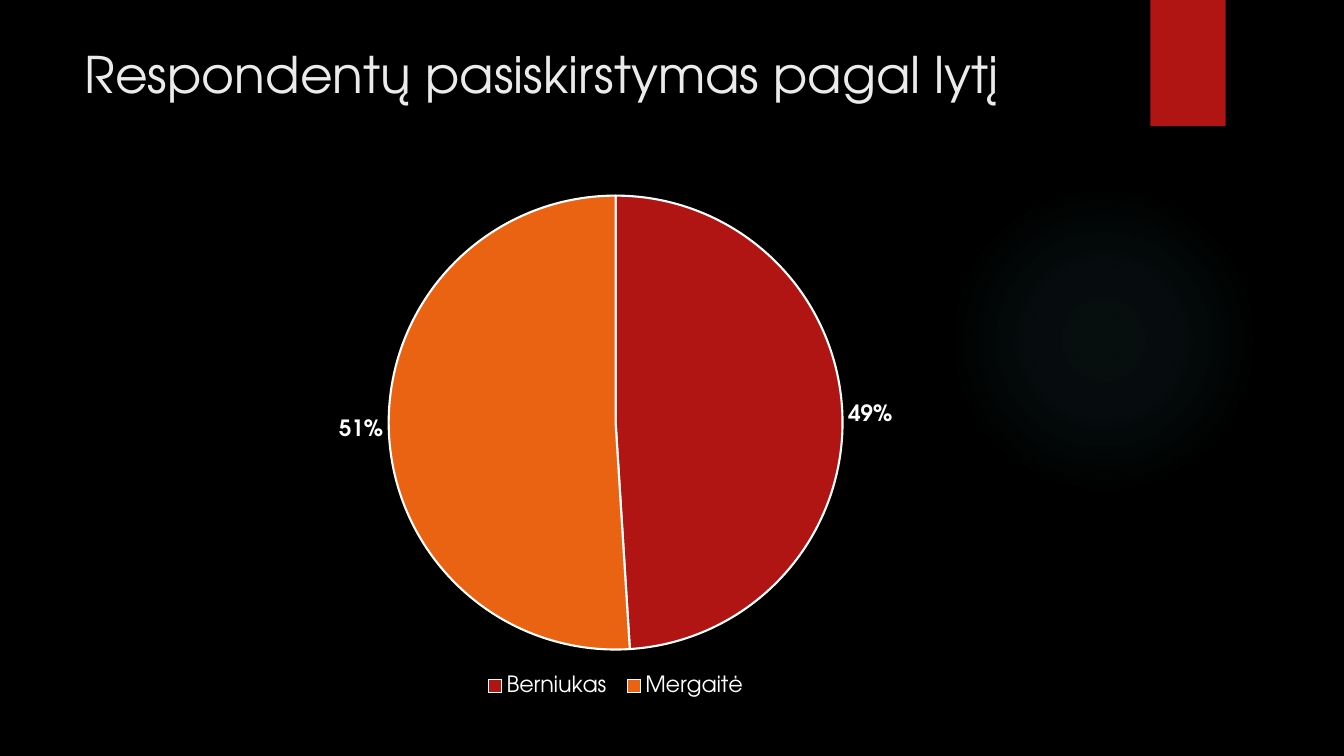
from lxml.etree import SubElement
from pptx import Presentation
from pptx.chart.data import CategoryChartData
from pptx.dml.color import RGBColor
from pptx.enum.chart import XL_CHART_TYPE, XL_LABEL_POSITION, XL_LEGEND_POSITION
from pptx.enum.shapes import MSO_SHAPE
from pptx.enum.text import MSO_ANCHOR, PP_ALIGN
from pptx.oxml import parse_xml
from pptx.oxml.ns import nsdecls, qn
from pptx.util import Cm, Pt

FONT = "TeX Gyre Adventor"
WHITE = "FFFFFF"
RED = "B01513"
ORANGE = "EA6312"
TEAL = "50B9C1"


def paint(fill, color):
    fill.solid()
    fill.fore_color.rgb = RGBColor.from_string(color)


def style_font(font, size, color, bold=False):
    font.name = FONT
    font.size = Pt(size)
    font.bold = bold
    font.color.rgb = RGBColor.from_string(color)


def add_plain_shape(slide, kind, left, top, width, height, color):
    shape = slide.shapes.add_shape(kind, Cm(left), Cm(top), Cm(width), Cm(height))
    shape.shadow.inherit = False
    shape.line.fill.background()
    paint(shape.fill, color)
    return shape


def add_glow(slide, left, top, diameter, color, stops):
    """Draw a circle that fades outwards; stops are (position %, opacity %)."""
    glow = add_plain_shape(slide, MSO_SHAPE.OVAL, left, top, diameter, diameter, color)
    stops_xml = "".join(
        f'<a:gs pos="{position * 1000}"><a:srgbClr val="{color}">'
        f'<a:alpha val="{opacity * 1000}"/></a:srgbClr></a:gs>'
        for position, opacity in stops
    )
    gradient = parse_xml(
        f'<a:gradFill {nsdecls("a")} rotWithShape="1"><a:gsLst>{stops_xml}</a:gsLst>'
        '<a:path path="circle"><a:fillToRect l="50000" t="50000" r="50000" b="50000"/>'
        "</a:path></a:gradFill>"
    )
    properties = glow.element.spPr
    properties.replace(properties.find(qn("a:solidFill")), gradient)


def set_title(slide, text):
    title = slide.shapes.title
    title.left, title.top, title.width, title.height = Cm(1.88), Cm(0.97), Cm(27.6), Cm(3.88)
    frame = title.text_frame
    frame.word_wrap = True
    frame.vertical_anchor = MSO_ANCHOR.TOP
    paragraph = frame.paragraphs[0]
    paragraph.alignment = PP_ALIGN.LEFT
    run = paragraph.add_run()
    run.text = text
    style_font(run.font, 36, "EBEBEB")


def place_plot(chart, x, y, width, height):
    """Fix the plot area, in fractions of the chart."""
    plot_area = chart.element.find(".//" + qn("c:plotArea"))
    layout = plot_area.find(qn("c:layout"))
    if layout is None:
        layout = SubElement(plot_area, qn("c:layout"))
        plot_area.insert(0, layout)
    manual = SubElement(layout, qn("c:manualLayout"))
    settings = {"layoutTarget": "inner", "xMode": "edge", "yMode": "edge",
                "x": x, "y": y, "w": width, "h": height}
    for tag, value in settings.items():
        SubElement(manual, qn("c:" + tag)).set("val", str(value))


def add_pie(slide, shares, colors):
    data = CategoryChartData()
    data.categories = list(shares)
    data.add_series("Series 1", list(shares.values()))
    chart = slide.shapes.add_chart(
        XL_CHART_TYPE.PIE, Cm(2.46), Cm(4.67), Cm(26.11), Cm(13), data
    ).chart
    style_font(chart.font, 10, WHITE)
    chart.has_title = False
    place_plot(chart, 0.28, 0.02, 0.44, 0.88)

    chart.has_legend = True
    chart.legend.position = XL_LEGEND_POSITION.BOTTOM
    chart.legend.include_in_layout = False
    style_font(chart.legend.font, 16, WHITE)

    pie = chart.plots[0]
    pie.vary_by_categories = True
    for index, color in enumerate(colors):
        slice_format = pie.series[0].points[index].format
        paint(slice_format.fill, color)
        paint(slice_format.line.fill, WHITE)
        slice_format.line.width = Pt(1.5)

    pie.has_data_labels = True
    labels = pie.data_labels
    labels.show_percentage = True
    labels.show_value = False
    labels.number_format = "0%"
    labels.number_format_is_linked = False
    labels.position = XL_LABEL_POSITION.OUTSIDE_END
    style_font(labels.font, 16, WHITE, bold=True)


def main():
    deck = Presentation()
    deck.slide_width, deck.slide_height = Cm(33.87), Cm(19.05)
    slide = deck.slides.add_slide(deck.slide_layouts[5])
    paint(slide.background.fill, "000000")

    add_glow(slide, 23.9, 4.65, 7.82, TEAL, [(0, 7), (36, 6), (69, 0)])
    add_plain_shape(slide, MSO_SHAPE.RECTANGLE, 28.99, 0, 1.9, 3.18, RED)
    set_title(slide, "Respondentų pasiskirstymas pagal lytį")
    add_pie(slide, {"Berniukas ": 49, "Mergaitė": 51}, [RED, ORANGE])

    deck.save("out.pptx")


if __name__ == "__main__":
    main()
